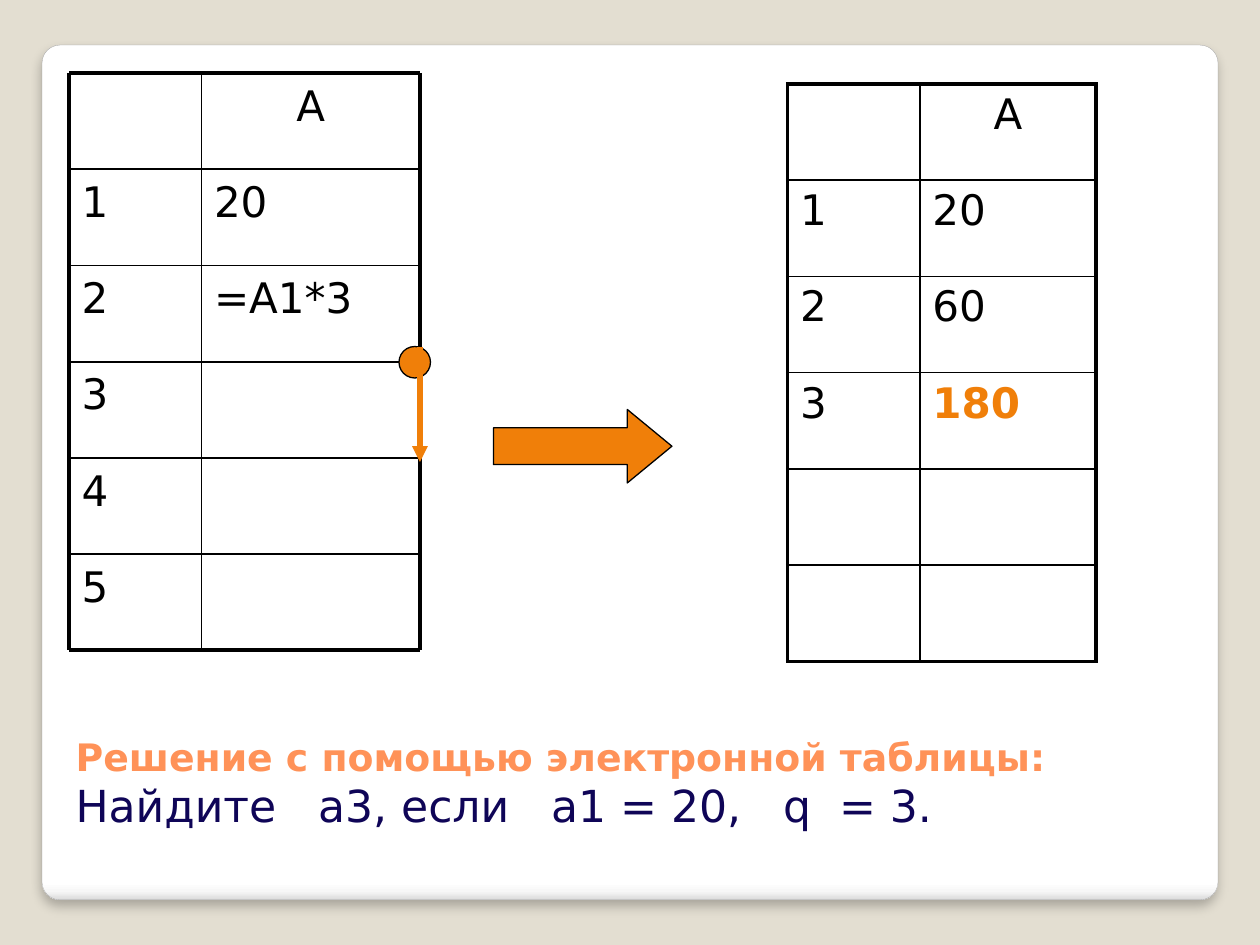
from copy import deepcopy
from dataclasses import dataclass

from lxml.etree import SubElement
from pptx import Presentation
from pptx.dml.color import RGBColor
from pptx.enum.shapes import MSO_CONNECTOR as Connector, MSO_SHAPE as Shape
from pptx.enum.text import MSO_ANCHOR as Anchor, PP_ALIGN as Align
from pptx.oxml import parse_xml
from pptx.oxml.ns import nsdecls, qn
from pptx.util import Inches, Pt

COLUMNS, ROWS = 120, 90
WIDTH, HEIGHT = Inches(10), Inches(7.5)
SHEET_HEIGHT, SHEET_ROWS = 55, 6
ROW_HEIGHT = SHEET_HEIGHT / SHEET_ROWS


@dataclass(frozen=True)
class Theme:
    """Colours, font and type sizes of the slide."""
    font: str = "DejaVu Sans"
    backdrop: str = "E3DED1"
    card: tuple = ((0, "FFFFFF"), (0.98, "FFFFFF"), (0.99, "F7F7F7"), (1, "DADADA"))
    card_edge: str = "A4A4A4"
    ink: str = "000000"
    accent: str = "F07F09"
    heading: str = "FF9258"
    task: str = "0F0557"
    heading_size: float = 21.6
    task_size: float = 25.2
    cell_size: float = 24
    thick: float = 2.25
    thin: float = 1


THEME = Theme()


def rgb(code):
    """Turn a hex code into a colour."""
    return RGBColor.from_string(code)


def across(columns):
    """Convert grid columns to a length."""
    return int(WIDTH * columns / COLUMNS)


def down(rows):
    """Convert grid rows to a length."""
    return int(HEIGHT * rows / ROWS)


def box(left, top, width, height):
    """Convert a grid rectangle to lengths."""
    return across(left), down(top), across(width), down(height)


def write(paragraph, text, size=THEME.cell_size, color=THEME.ink, bold=False,
          align=Align.LEFT, before=0):
    """Write one formatted run into a paragraph."""
    paragraph.alignment = align
    paragraph.space_before = Pt(before)
    run = paragraph.add_run()
    run.text = text
    run.font.name = THEME.font
    run.font.size = Pt(size)
    run.font.bold = bold
    run.font.color.rgb = rgb(color)


def write_cell(frame, text, row, highlight=None):
    """Write a sheet value, centred in the header row."""
    marked = text == highlight
    write(frame.paragraphs[0], text, bold=marked, before=2.5,
          color=THEME.accent if marked else THEME.ink,
          align=Align.CENTER if row == 0 else Align.LEFT)


def add_card(slide):
    """Place the rounded white card behind everything else."""
    card = slide.shapes.add_shape(Shape.ROUNDED_RECTANGLE, *box(4, 4.3, 112, 81.4))
    card.adjustments[0] = 0.021
    card.fill.gradient()
    card.fill.gradient_angle = 270
    stop_list = card._element.spPr.find(".//" + qn("a:gsLst"))
    stop_list.extend([deepcopy(stop) for stop in stop_list])
    for stop, (position, color) in zip(card.fill.gradient_stops, THEME.card):
        stop.position = position
        stop.color.rgb = rgb(color)
    card.line.color.rgb = rgb(THEME.card_edge)
    card.line.width = Pt(0.16)
    card._element.spPr.append(parse_xml(
        f'<a:effectLst {nsdecls("a")}><a:outerShdw blurRad="{Pt(6)}" dist="{Pt(4)}" '
        'dir="5400000" algn="t" rotWithShape="0"><a:srgbClr val="000000">'
        '<a:alpha val="25000"/></a:srgbClr></a:outerShdw></a:effectLst>'))
    slide.shapes._spTree.insert(2, card._element)


def add_title(slide):
    """Fill the title with the heading and the task."""
    title = slide.shapes.title
    title.left, title.top, title.width, title.height = box(6, 71, 107.4, 13.8)
    frame = title.text_frame
    frame.word_wrap = True
    frame.vertical_anchor = Anchor.BOTTOM
    frame.margin_top, frame.margin_bottom = 0, down(5.6)
    paragraph = frame.paragraphs[0]
    write(paragraph, "Решение с помощью электронной таблицы:",
          size=THEME.heading_size, color=THEME.heading, bold=True)
    paragraph.add_line_break()
    write(paragraph, "Найдите   а3, если   а1 = 20,   q  = 3.",
          size=THEME.task_size, color=THEME.task)


def add_line(slide, start, end, color=THEME.ink, width=THEME.thin, head=None):
    """Draw a straight line between two grid points."""
    line = slide.shapes.add_connector(
        Connector.STRAIGHT, across(start[0]), down(start[1]), across(end[0]), down(end[1]))
    line.line.color.rgb = rgb(color)
    line.line.width = Pt(width)
    if head:
        SubElement(line.line._get_or_add_ln(), qn("a:tailEnd"), type=head)
    SubElement(line._element.spPr, qn("a:effectLst"))


def add_ruled_sheet(slide, left, top, widths, content):
    """Lay out a spreadsheet of text boxes and ruling lines."""
    edges = (left, left + widths[0], left + sum(widths))
    bottom = top + SHEET_HEIGHT
    for r, texts in enumerate(content):
        for x, width, text in zip(edges, widths, texts):
            if text:
                value = slide.shapes.add_textbox(
                    *box(x, top + r * ROW_HEIGHT, width, ROW_HEIGHT))
                value.text_frame.word_wrap = True
                write_cell(value.text_frame, text, r)
    for r in range(SHEET_ROWS + 1):
        y = top + r * ROW_HEIGHT
        add_line(slide, (left, y), (edges[-1], y),
                 width=THEME.thick if r in (0, SHEET_ROWS) else THEME.thin)
    for x in edges:
        add_line(slide, (x, top), (x, bottom),
                 width=THEME.thin if x == edges[1] else THEME.thick)


def set_borders(cell, outer_sides):
    """Draw thick borders on outer sides and thin ones elsewhere."""
    properties = cell._tc.get_or_add_tcPr()
    for index, side in enumerate("LRTB"):
        width = THEME.thick if side in outer_sides else THEME.thin
        properties.insert(index, parse_xml(
            f'<a:ln{side} {nsdecls("a")} w="{Pt(width)}"><a:solidFill>'
            f'<a:srgbClr val="{THEME.ink}"/></a:solidFill></a:ln{side}>'))


def add_result_sheet(slide, left, top, widths, content, highlight):
    """Add the calculated spreadsheet as a table."""
    sheet = slide.shapes.add_table(
        SHEET_ROWS, 2, *box(left, top, sum(widths), SHEET_HEIGHT)).table
    sheet.first_row = sheet.horz_banding = False
    for column, width in zip(sheet.columns, widths):
        column.width = across(width)
    for r, texts in enumerate(content):
        sheet.rows[r].height = down(ROW_HEIGHT)
        for c, text in enumerate(texts):
            cell = sheet.cell(r, c)
            cell.fill.background()
            outer = "LR"[c] + ("T" if r == 0 else "")
            set_borders(cell, outer + ("B" if r == SHEET_ROWS - 1 else ""))
            if text:
                write_cell(cell.text_frame, text, r, highlight)


def add_marker(slide, preset, place):
    """Add an outlined accent shape."""
    marker = slide.shapes.add_shape(preset, *box(*place))
    marker.shadow.inherit = False
    marker.fill.solid()
    marker.fill.fore_color.rgb = rgb(THEME.accent)
    marker.line.color.rgb = rgb(THEME.ink)
    marker.line.width = Pt(0.75)
    return marker


def main():
    """Build and save the slide."""
    deck = Presentation()
    deck.slide_width, deck.slide_height = WIDTH, HEIGHT
    slide = deck.slides.add_slide(deck.slide_layouts[5])
    slide.background.fill.solid()
    slide.background.fill.fore_color.rgb = rgb(THEME.backdrop)
    add_card(slide)
    add_title(slide)
    add_ruled_sheet(slide, 6.6, 6.95, (12.6, 20.8), [
        ("", "A"), ("1", "20"), ("2", "=A1*3"), ("3", ""), ("4", ""), ("5", "")])
    add_marker(slide, Shape.OVAL, (38, 33, 3, 3))
    add_line(slide, (40, 33), (40, 44), color=THEME.accent, width=3, head="triangle")
    result_arrow = add_marker(slide, Shape.RIGHT_ARROW, (47, 39, 17, 7))
    result_arrow.adjustments[1] = 0.607
    add_result_sheet(slide, 75, 8, (12.6, 16.8), [
        ("", "A"), ("1", "20"), ("2", "60"), ("3", "180"), ("", ""), ("", "")], "180")
    deck.save("out.pptx")


if __name__ == "__main__":
    main()
